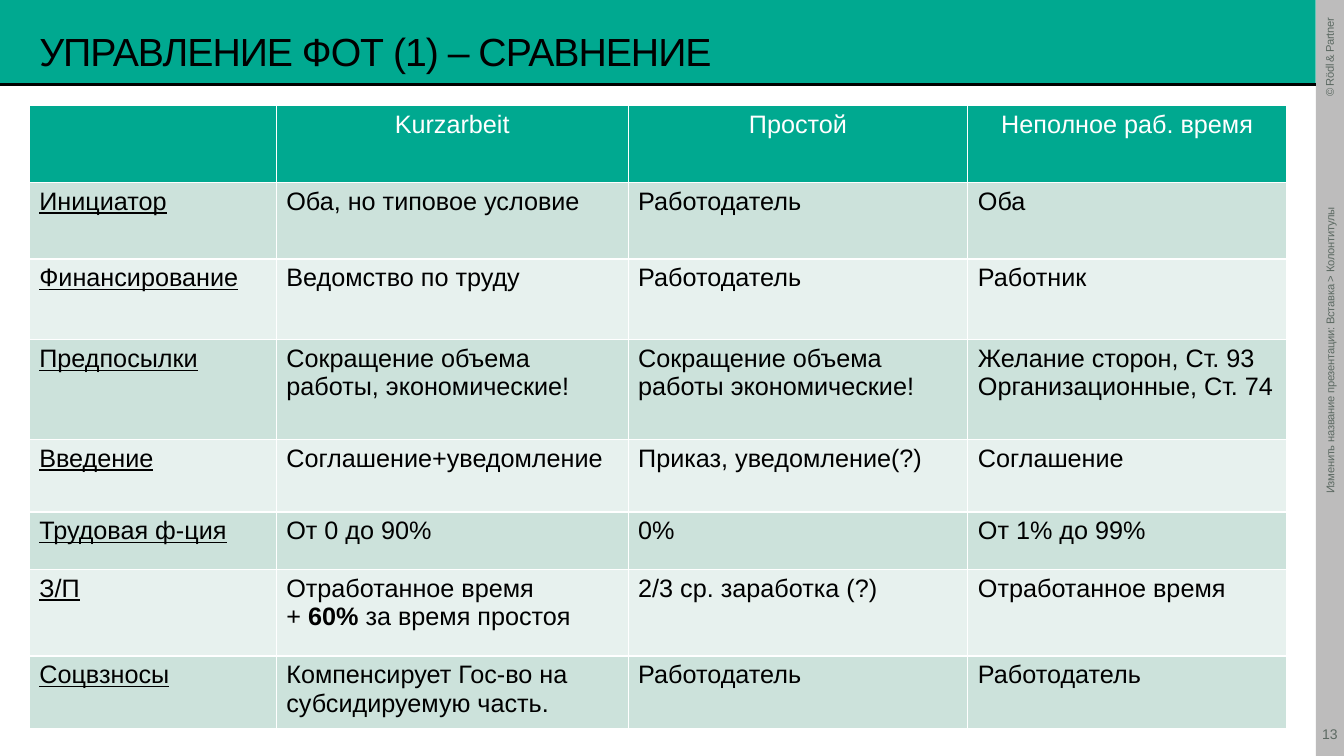
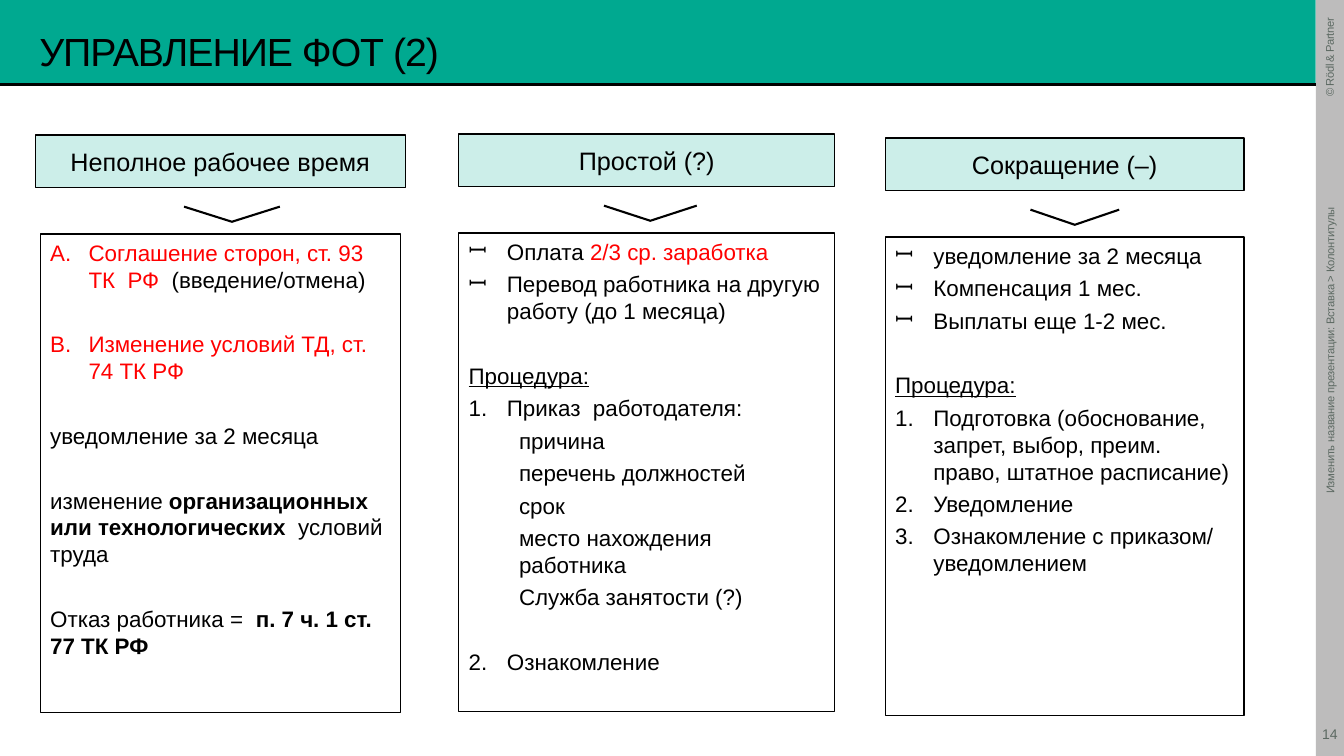
from lxml import etree
from pptx import Presentation
from pptx.dml.color import RGBColor
from pptx.enum import shapes, text
from pptx.oxml import ns
from pptx.util import Inches, Pt

TEAL = RGBColor(0x00, 0xA9, 0x90)
PALE_TEAL = RGBColor(0xCC, 0xEE, 0xE9)
BAND_DARK = RGBColor(0xCC, 0xE2, 0xDB)
BAND_LIGHT = RGBColor(0xE7, 0xF1, 0xEE)
STRIP_GREY = RGBColor(0xBD, 0xBC, 0xBC)
TEXT_GREY = RGBColor(0x5C, 0x69, 0x62)
BLACK = RGBColor(0x00, 0x00, 0x00)
WHITE = RGBColor(0xFF, 0xFF, 0xFF)
RED = RGBColor(0xFF, 0x00, 0x00)

FONT = "Arial"
STRIP_LEFT, STRIP_WIDTH = 13.05, 0.28
BAND_HEIGHT = 0.84
SLIDE_HEIGHT = 7.5
GAP, LARGE_GAP = 4, 27
LEFT = text.PP_ALIGN.LEFT
CENTER = text.PP_ALIGN.CENTER
RIGHT = text.PP_ALIGN.RIGHT

COLUMN_WIDTHS = [2.45, 3.49, 3.37, 3.16]
ROW_HEIGHTS = [0.76, 0.76, 0.8, 0.99, 0.72, 0.57, 0.86, 0.72]
COMPARISON = [
    ["", "Kurzarbeit", "Простой", "Неполное раб. время"],
    ["Инициатор", "Оба, но типовое условие", "Работодатель", "Оба"],
    ["Финансирование", "Ведомство по труду", "Работодатель", "Работник"],
    ["Предпосылки", "Сокращение объема работы, экономические!",
     "Сокращение объема работы экономические!",
     "Желание сторон, Ст. 93\nОрганизационные, Ст. 74"],
    ["Введение", "Соглашение+уведомление", "Приказ, уведомление(?)", "Соглашение"],
    ["Трудовая ф-ция", "От 0 до 90%", "0%", "От 1% до 99%"],
    ["З/П", [[("Отработанное время", "")],
             [("+ ", ""), ("60% ", "bold"), ("за время простоя", "")]],
     "2/3 ср. заработка (?)", "Отработанное время"],
    ["Соцвзносы", "Компенсирует Гос-во на субсидируемую часть.",
     "Работодатель", "Работодатель"],
]

PART_TIME = [
    ("letter", GAP, [("Соглашение сторон, ст. 93 ТК  РФ ", "red"), (" (введение/отмена)", "")]),
    ("letter", LARGE_GAP, [("Изменение условий ТД, ст. 74 ТК РФ", "red")]),
    ("plain", LARGE_GAP, [("уведомление за 2 месяца", "")]),
    ("plain", LARGE_GAP, [("изменение ", ""), ("организационных или технологических  ", "bold"),
                          ("условий труда", "")]),
    ("plain", LARGE_GAP, [("Отказ работника =  ", ""), ("п. 7 ч. 1 ст. 77 ТК РФ", "bold")]),
]
DOWNTIME = [
    ("dash", GAP, [("Оплата ", ""), ("2/3 ср. заработка", "red")]),
    ("dash", GAP, [("Перевод работника на другую работу (до 1 месяца)", "")]),
    ("plain", LARGE_GAP, [("Процедура:", "underline")]),
    ("number", GAP, [("Приказ  работодателя:", "")]),
    ("detail", GAP, [("причина", "")]),
    ("detail", GAP, [("перечень должностей", "")]),
    ("detail", GAP, [("срок", "")]),
    ("detail", GAP, [("место нахождения работника", "")]),
    ("detail", GAP, [("Служба занятости (?)", "")]),
    ("number", LARGE_GAP, [("Ознакомление", "")]),
]
REDUNDANCY = [
    ("dash", GAP, [("уведомление за 2 месяца", "")]),
    ("dash", GAP, [("Компенсация 1 мес.", "")]),
    ("dash", GAP, [("Выплаты еще 1-2 мес.", "")]),
    ("plain", LARGE_GAP, [("Процедура:", "underline")]),
    ("number", GAP, [("Подготовка (обоснование, запрет, выбор, преим. право, "
                      "штатное расписание)", "")]),
    ("number", GAP, [("Уведомление", "")]),
    ("number", GAP, [("Ознакомление с приказом/ уведомлением", "")]),
]

BULLETS = {
    "dash": ("a:buChar", "char", "ꟷ"),
    "letter": ("a:buAutoNum", "type", "alphaUcPeriod"),
    "number": ("a:buAutoNum", "type", "arabicPeriod"),
}


def add_runs(paragraph, runs, size, color=BLACK, spacing=0):
    """Write (text, style) pairs as formatted runs."""
    for words, style in runs:
        run = paragraph.add_run()
        run.text = words
        run.font.name = FONT
        run.font.size = Pt(size)
        run.font.bold = style == "bold"
        run.font.underline = style == "underline"
        run.font.color.rgb = RED if style == "red" else color
        if spacing:
            run.font._element.set("spc", str(round(spacing * 100)))


def add_line_of_text(frame, words, size, color=BLACK, align=LEFT, spacing=0):
    """Fill a frame with one vertically centred paragraph."""
    frame.word_wrap = True
    frame.vertical_anchor = text.MSO_ANCHOR.MIDDLE
    paragraph = frame.paragraphs[0]
    paragraph.alignment = align
    add_runs(paragraph, [(words, "")], size, color, spacing)


def add_box(slide, left, top, width, height, fill, line=None):
    """Add a flat rectangle, outlined when a line colour is given."""
    box = slide.shapes.add_shape(shapes.MSO_SHAPE.RECTANGLE, Inches(left), Inches(top),
                                 Inches(width), Inches(height))
    box.shadow.inherit = False
    box.fill.solid()
    box.fill.fore_color.rgb = fill
    if line is None:
        box.line.fill.background()
    else:
        box.line.color.rgb = line
        box.line.width = Pt(1)
    return box


def add_small_text(slide, left, top, width, height, words, size, align,
                   inset=0, rotation=0, spacing=0):
    """Add grey text for the side strip."""
    label = slide.shapes.add_textbox(Inches(left), Inches(top), Inches(width), Inches(height))
    label.rotation = rotation
    frame = label.text_frame
    frame.margin_left = frame.margin_top = frame.margin_bottom = 0
    frame.margin_right = Inches(inset)
    add_line_of_text(frame, words, size, TEXT_GREY, align, spacing)
    return label


def add_rule(slide):
    """Add the black rule under the title band."""
    rule = slide.shapes.add_connector(shapes.MSO_CONNECTOR.STRAIGHT, 0, Inches(BAND_HEIGHT),
                                      Inches(STRIP_LEFT), Inches(BAND_HEIGHT))
    rule.line.color.rgb = BLACK
    rule.line.width = Pt(2.25)
    etree.SubElement(rule.element.spPr, ns.qn("a:effectLst"))
    return rule


def furnish_layout(layout, slide):
    """Build the band, rule and side strip once and place them on the layout."""
    for placeholder in list(layout.placeholders):
        if placeholder.placeholder_format.type != shapes.PP_PLACEHOLDER.TITLE:
            layout.shapes.element.remove(placeholder.element)
    parts = [
        add_box(slide, 0, 0, STRIP_LEFT, BAND_HEIGHT, TEAL),
        add_box(slide, STRIP_LEFT, 0, STRIP_WIDTH, SLIDE_HEIGHT, STRIP_GREY),
        add_rule(slide),
        add_small_text(slide, 12.69, 0.35, 0.99, 0.29, "© Rödl & Partner", 8, RIGHT,
                       inset=0.18, rotation=270, spacing=-0.3),
        add_small_text(slide, 10.67, 4.39, 5.04, 0.29,
                       "Изменить название презентации: Вставка > Колонтитулы", 8, RIGHT,
                       inset=0.04, rotation=270, spacing=-0.2),
    ]
    for part in parts:
        layout.shapes.element.append(part.element)


def add_heading(slide, title, number):
    """Set the slide title and its page number."""
    placeholder = slide.shapes.title
    placeholder.left, placeholder.top = Inches(0.29), Inches(0.29)
    placeholder.width, placeholder.height = Inches(12.48), Inches(0.43)
    placeholder.text_frame.auto_size = text.MSO_AUTO_SIZE.NONE
    add_line_of_text(placeholder.text_frame, title, 28, spacing=-0.7)
    add_small_text(slide, STRIP_LEFT, 7.06, STRIP_WIDTH, 0.44, str(number), 10, CENTER)


def set_cell_borders(cell, color, width):
    """Draw the four borders of a table cell."""
    properties = cell._tc.get_or_add_tcPr()
    for side in ("L", "R", "T", "B"):
        border = etree.SubElement(properties, ns.qn(f"a:ln{side}"), w=str(Pt(width)))
        fill = etree.SubElement(border, ns.qn("a:solidFill"))
        etree.SubElement(fill, ns.qn("a:srgbClr"), val=str(color))


def fill_cell(cell, content, row, column):
    """Write and colour one cell by its place in the table."""
    header = row == 0
    set_cell_borders(cell, WHITE, 1)
    cell.fill.solid()
    cell.fill.fore_color.rgb = TEAL if header else BAND_DARK if row % 2 else BAND_LIGHT
    if isinstance(content, str):
        style = "underline" if column == 0 else ""
        content = [[(words, style)] for words in content.split("\n") if words]
    frame = cell.text_frame
    for index, runs in enumerate(content):
        paragraph = frame.add_paragraph() if index else frame.paragraphs[0]
        paragraph.alignment = CENTER if header else LEFT
        add_runs(paragraph, runs, 18, WHITE if header else BLACK)


def add_comparison_table(slide):
    """Add the table that compares the three schemes."""
    frame = slide.shapes.add_table(len(ROW_HEIGHTS), len(COLUMN_WIDTHS), Inches(0.29),
                                   Inches(1.05), Inches(sum(COLUMN_WIDTHS)),
                                   Inches(sum(ROW_HEIGHTS)))
    table = frame.table
    table.horz_banding = False
    for column, width in zip(table.columns, COLUMN_WIDTHS):
        column.width = Inches(width)
    for row, height in zip(table.rows, ROW_HEIGHTS):
        row.height = Inches(height)
    for row, contents in enumerate(COMPARISON):
        for column, content in enumerate(contents):
            fill_cell(table.cell(row, column), content, row, column)


def format_item(paragraph, kind):
    """Set the bullet, level and indent of a list item."""
    properties = paragraph._p.get_or_add_pPr()
    if kind in BULLETS:
        tag, attribute, value = BULLETS[kind]
        etree.SubElement(properties, ns.qn("a:buFont"), typeface=FONT)
        etree.SubElement(properties, ns.qn(tag)).set(attribute, value)
        properties.set("marL", str(Inches(0.38)))
        properties.set("indent", str(-Inches(0.38)))
    elif kind == "detail":
        paragraph.level = 1
        properties.set("marL", str(Inches(0.5)))
        properties.set("indent", "0")


def add_list_box(slide, left, top, width, items):
    """Add an outlined box with its list of items."""
    frame = add_box(slide, left, top, width, 4.75, WHITE, BLACK).text_frame
    frame.word_wrap = True
    frame.vertical_anchor = text.MSO_ANCHOR.TOP
    for index, (kind, gap, runs) in enumerate(items):
        paragraph = frame.add_paragraph() if index else frame.paragraphs[0]
        format_item(paragraph, kind)
        paragraph.alignment = LEFT
        paragraph.space_before = Pt(gap if index else 0)
        add_runs(paragraph, runs, 16)


def add_chevron(slide, center, top, width):
    """Add an open chevron that points down."""
    middle, half = Inches(center), Inches(width / 2)
    builder = slide.shapes.build_freeform(middle - half, Inches(top))
    builder.add_line_segments([(middle, Inches(top + 0.15)), (middle + half, Inches(top))],
                              close=False)
    chevron = builder.convert_to_shape()
    chevron.shadow.inherit = False
    chevron.fill.background()
    chevron.line.color.rgb = BLACK
    chevron.line.width = Pt(1.5)


def add_option(slide, heading, top, head, body, chevron, items):
    """Add one column: heading box, chevron and list box."""
    head_left, head_width = head
    header = add_box(slide, head_left, top, head_width, 0.52, PALE_TEAL, BLACK)
    add_line_of_text(header.text_frame, heading, 18, align=CENTER)
    add_chevron(slide, chevron[0], top + 0.71, chevron[1])
    add_list_box(slide, body[0], top + 0.98, body[1], items)


def main():
    """Build and save the presentation."""
    presentation = Presentation()
    presentation.slide_width = Inches(13.33)
    presentation.slide_height = Inches(SLIDE_HEIGHT)
    layout = presentation.slide_layouts[5]

    comparison = presentation.slides.add_slide(layout)
    furnish_layout(layout, comparison)
    add_heading(comparison, "УПРАВЛЕНИЕ ФОТ (1) – СРАВНЕНИЕ", 13)
    add_comparison_table(comparison)

    options = presentation.slides.add_slide(layout)
    add_heading(options, "УПРАВЛЕНИЕ ФОТ (2)", 14)
    add_option(options, "Неполное рабочее время", 1.34, (0.35, 3.67), (0.4, 3.57),
               (2.3, 0.95), PART_TIME)
    add_option(options, "Простой (?)", 1.33, (4.55, 3.73), (4.55, 3.73),
               (6.45, 0.92), DOWNTIME)
    add_option(options, "Сокращение (–)", 1.37, (8.78, 3.56), (8.78, 3.56),
               (10.66, 0.88), REDUNDANCY)
    presentation.save("out.pptx")


if __name__ == "__main__":
    main()
